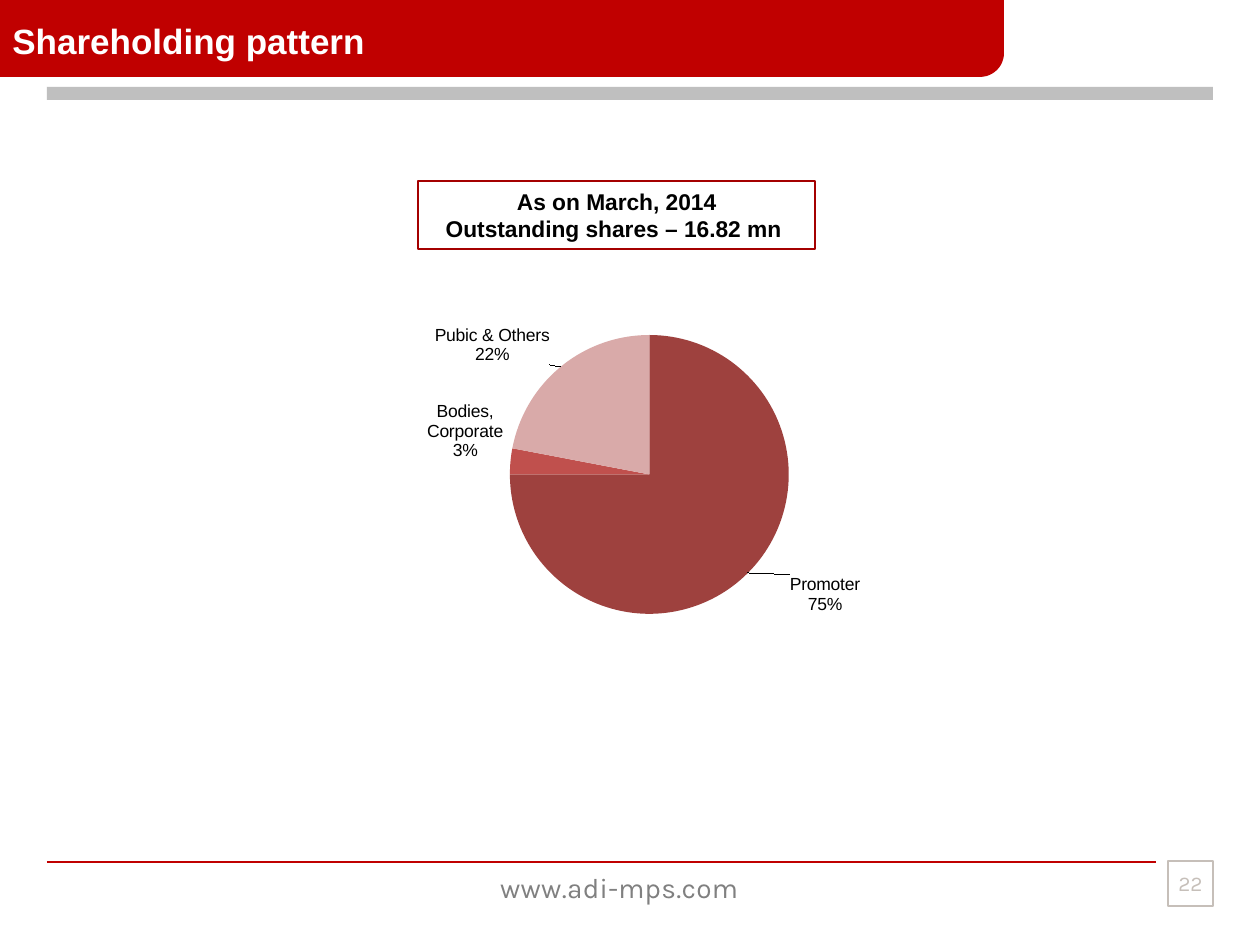
from dataclasses import dataclass

from lxml import etree
from pptx import Presentation
from pptx.chart.data import CategoryChartData
from pptx.dml.color import RGBColor
from pptx.enum.chart import XL_CHART_TYPE as ChartType, XL_LABEL_POSITION as LabelPos
from pptx.enum.shapes import MSO_CONNECTOR as Connector, MSO_SHAPE as Shape
from pptx.enum.text import MSO_ANCHOR as Anchor, PP_ALIGN as Align
from pptx.oxml import parse_xml
from pptx.oxml.ns import nsdecls, qn
from pptx.util import Emu, Pt


@dataclass(frozen=True)
class Theme:
    red: str = "C00000"
    frame: str = "A40000"
    bar: str = "BFBFBF"
    page: str = "C6BFB9"
    site: str = "808080"
    black: str = "000000"
    white: str = "FFFFFF"
    slices: tuple = ("9E413E", "C0504D", "D9AAA9")
    main_font: str = "Arial"
    footer_font: str = "Karla"
    title_size: int = 20
    site_size: int = 16
    box_size: int = 13
    page_size: int = 12
    label_size: int = 10


T = Theme()
PX_PER_INCH = 126


def px(n):
    return Emu(round(n * 914400 / PX_PER_INCH))


def rgb(value):
    return RGBColor.from_string(value)


def set_font(font, name, size, color, bold=False):
    font.name, font.size, font.bold = name, Pt(size), bold
    font.color.rgb = rgb(color)


def add_box(slide, box, fill=None, line=None, width=0.75, kind=Shape.RECTANGLE):
    sp = slide.shapes.add_shape(kind, *map(px, box))
    sp.shadow.inherit = False
    if fill:
        sp.fill.solid()
        sp.fill.fore_color.rgb = rgb(fill)
    else:
        sp.fill.background()
    if line:
        sp.line.color.rgb = rgb(line)
        sp.line.width = Pt(width)
    else:
        sp.line.fill.background()
    return sp


def add_text_box(slide, box):
    return slide.shapes.add_textbox(*map(px, box))


def write(sp, lines, font, size, color, bold=False, align=Align.CENTER,
          anchor=Anchor.MIDDLE, inset=None):
    tf = sp.text_frame
    tf.word_wrap = True
    tf.vertical_anchor = anchor
    if inset is not None:
        tf.margin_left = tf.margin_right = tf.margin_top = tf.margin_bottom = inset
    for i, line in enumerate(lines):
        p = tf.paragraphs[0] if i == 0 else tf.add_paragraph()
        p.add_run().text = line
        p.alignment = align
        set_font(p.font, font, size, color, bold)
    return tf


def add_rule(slide, x1, x2, y):
    line = slide.shapes.add_connector(Connector.STRAIGHT, px(x1), px(y), px(x2), px(y))
    line.line.color.rgb = rgb(T.red)
    line.line.width = Pt(0.75)
    etree.SubElement(line._element.spPr, qn("a:effectLst"))


def manual_layout(inner=False, **values):
    target = '<c:layoutTarget val="inner"/>' if inner else ""
    modes = '<c:xMode val="edge"/><c:yMode val="edge"/>' if inner else ""
    parts = "".join(f'<c:{k} val="{v}"/>' for k, v in values.items())
    return parse_xml(f'<c:layout {nsdecls("c")}><c:manualLayout>{target}{modes}{parts}'
                     '</c:manualLayout></c:layout>')


def add_separator(labels):
    sep = etree.Element(qn("c:separator"))
    sep.text = "\n"
    labels.find(qn("c:showBubbleSize")).addnext(sep)


def add_pie(slide, box, shares, label_shifts):
    data = CategoryChartData()
    data.categories = list(shares)
    data.add_series("Series 1", list(shares.values()))
    chart = slide.shapes.add_chart(ChartType.PIE, *map(px, box), data).chart
    chart.has_legend = chart.has_title = False
    set_font(chart.font, T.main_font, T.label_size, T.black)

    # Fixed circle inside the chart area
    plot = chart.plots[0]
    area = plot._element.getparent()
    for old in area.findall(qn("c:layout")):
        area.remove(old)
    area.insert(0, manual_layout(True, x=0.3, y=0.12, w=0.46, h=0.76))

    plot.vary_by_categories = True
    series = plot.series[0]
    for i, color in enumerate(T.slices):
        fill = series.points[i].format.fill
        fill.solid()
        fill.fore_color.rgb = rgb(color)

    # Category and share on separate lines, some moved off the circle
    labels = series.data_labels
    labels.show_category_name = labels.show_percentage = True
    labels.show_value = False
    labels.number_format, labels.number_format_is_linked = "0%", False
    labels.position = LabelPos.OUTSIDE_END
    add_separator(labels._element)
    for i in label_shifts:
        series.points[i].data_label.position = LabelPos.OUTSIDE_END
    for label in labels._element.findall(qn("c:dLbl")):
        idx = label.find(qn("c:idx"))
        dx, dy = label_shifts[int(idx.get("val"))]
        idx.addnext(manual_layout(x=dx, y=dy))
        number = etree.Element(qn("c:numFmt"), formatCode="0%", sourceLinked="0")
        label.find(qn("c:layout")).addnext(number)
        for name, on in (("showVal", "0"), ("showCatName", "1"), ("showPercent", "1")):
            label.find(qn(f"c:{name}")).set("val", on)
        add_separator(label)


def add_header(slide, title):
    add_box(slide, (47, 87, 1166, 13), T.bar)
    # Banner with only its lower right corner rounded
    add_box(slide, (0, 0, 291, 77), T.red)
    add_box(slide, (713, 0, 291, 38), T.red)
    banner = add_box(slide, (0, 0, 1004, 77), T.red, kind=Shape.ROUNDED_RECTANGLE)
    banner.adjustments[0] = 0.31
    write(add_text_box(slide, (0, -2, 908, 84)), [title], T.main_font, T.title_size,
          T.white, bold=True, align=Align.LEFT)


def add_footer(slide, site, page):
    add_rule(slide, 47, 1156, 862)
    tf = write(add_text_box(slide, (77, 864, 1085, 47)), [site], T.footer_font,
               T.site_size, T.site, anchor=Anchor.TOP)
    tf.paragraphs[0].runs[0].font._element.set("spc", "20")
    write(add_box(slide, (1168, 861, 45, 45), line=T.page), [page], T.footer_font,
          T.page_size, T.page, inset=0)


def main():
    prs = Presentation()
    prs.slide_width, prs.slide_height = px(1260), px(945)
    slide = prs.slides.add_slide(prs.slide_layouts[6])

    add_header(slide, "Shareholding pattern")
    add_footer(slide, "www.adi-mps.com", "22")

    # Date and share count
    write(add_box(slide, (418, 181, 397, 68), line=T.frame, width=1.5),
          ["As on March, 2014", "Outstanding shares – 16.82 mn "],
          T.main_font, T.box_size, T.black, bold=True)

    add_pie(slide, (324, 291, 614, 367),
            {"Promoter": 75, "Bodies, Corporate": 3, "Pubic & Others": 22},
            {0: (0.06, -0.01), 2: (-0.01, 0.01)})

    prs.save("out.pptx")


if __name__ == "__main__":
    main()
